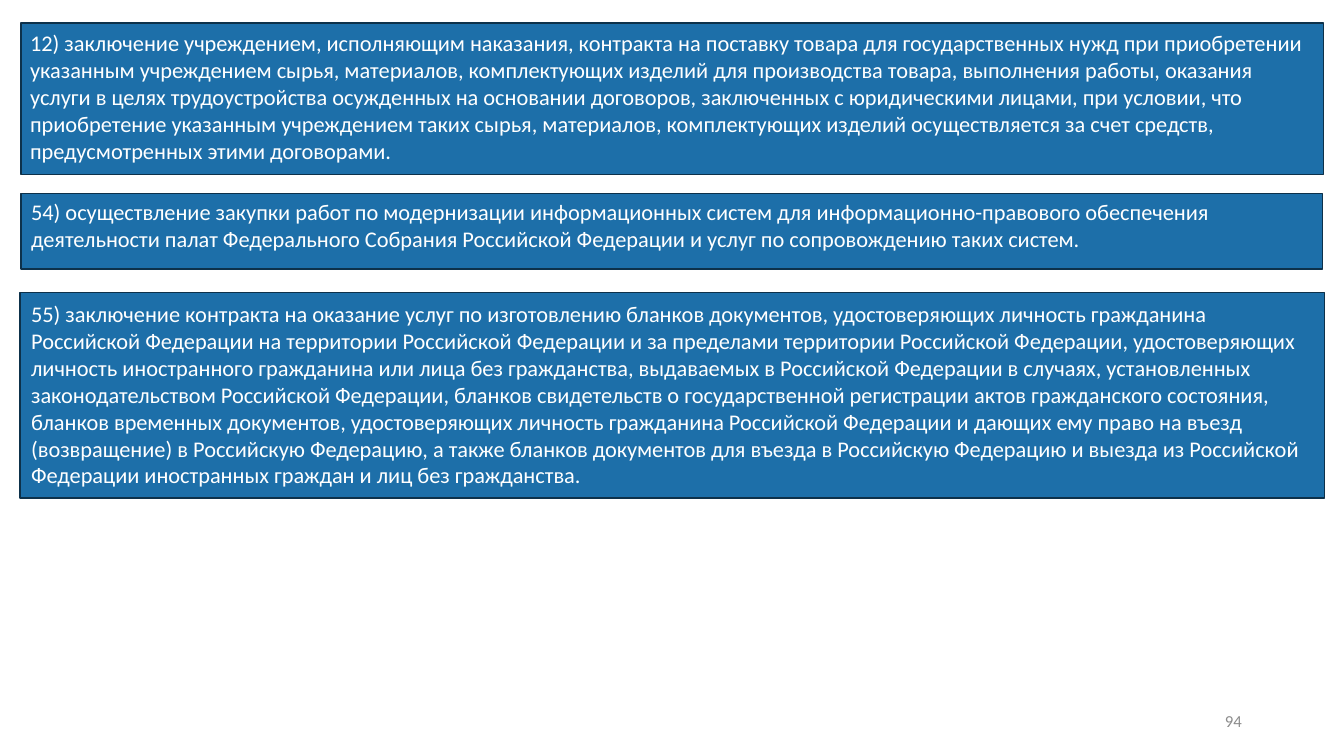
from pptx import Presentation
from pptx.dml.color import RGBColor
from pptx.enum.shapes import MSO_SHAPE
from pptx.enum.text import MSO_ANCHOR, MSO_AUTO_SIZE, PP_ALIGN
from pptx.util import Pt

COLORS = {"panel": "1D6FA9", "border": "0D314A", "text": "FFFFFF", "number": "8C8C8C"}

CLAUSES = [
    (
        (15.12, 16.56, 930.24, 108),
        (14.4, 17.28, 931.68, 104.4),
        "12) заключение учреждением, исполняющим наказания, контракта на поставку товара "
        "для государственных нужд при приобретении указанным учреждением сырья, материалов, "
        "комплектующих изделий для производства товара, выполнения работы, оказания услуги "
        "в целях трудоустройства осужденных на основании договоров, заключенных с юридическими "
        "лицами, при условии, что приобретение указанным учреждением таких сырья, материалов, "
        "комплектующих изделий осуществляется за счет средств, предусмотренных этими договорами.",
    ),
    (
        (15.12, 138.24, 929.52, 54),
        (15.12, 138.24, 930.24, 46.08),
        "54) осуществление закупки работ по модернизации информационных систем для "
        "информационно-правового обеспечения деятельности палат Федерального Собрания "
        "Российской Федерации и услуг по сопровождению таких систем.",
    ),
    (
        (14.4, 208.8, 931.68, 146.88),
        (15.12, 210.96, 929.52, 143.28),
        "55) заключение контракта на оказание услуг по изготовлению бланков документов, "
        "удостоверяющих личность гражданина Российской Федерации на территории Российской "
        "Федерации и за пределами территории Российской Федерации, удостоверяющих личность "
        "иностранного гражданина или лица без гражданства, выдаваемых в Российской Федерации "
        "в случаях, установленных законодательством Российской Федерации, бланков свидетельств "
        "о государственной регистрации актов гражданского состояния, бланков временных "
        "документов, удостоверяющих личность гражданина Российской Федерации и дающих ему "
        "право на въезд (возвращение) в Российскую Федерацию, а также бланков документов для "
        "въезда в Российскую Федерацию и выезда из Российской Федерации иностранных граждан "
        "и лиц без гражданства.",
    ),
]


class SlideBuilder:
    font = "Calibri"

    def __init__(self, slide):
        self.slide = slide

    def color(self, name):
        return RGBColor.from_string(COLORS[name])

    def panel(self, frame):
        panel = self.slide.shapes.add_shape(MSO_SHAPE.RECTANGLE, *map(Pt, frame))
        panel.shadow.inherit = False
        panel.fill.solid()
        panel.fill.fore_color.rgb = self.color("panel")
        panel.line.color.rgb = self.color("border")
        panel.line.width = Pt(1)

    def text(self, frame, wording, size, color, align=PP_ALIGN.LEFT,
             anchor=MSO_ANCHOR.TOP, fit=MSO_AUTO_SIZE.NONE):
        box = self.slide.shapes.add_textbox(*map(Pt, frame))
        box.text_frame.text = wording
        box.text_frame.word_wrap = True
        box.text_frame.auto_size = fit
        box.text_frame.vertical_anchor = anchor
        para = box.text_frame.paragraphs[0]
        para.alignment = align
        span = para.runs[0]
        span.font.name = self.font
        span.font.size = Pt(size)
        span.font.color.rgb = self.color(color)

    def clause(self, panel_frame, text_frame, wording):
        self.panel(panel_frame)
        self.text(text_frame, wording, 16, "text", fit=MSO_AUTO_SIZE.SHAPE_TO_FIT_TEXT)

    def page_number(self, number):
        self.text((678.24, 500.4, 216, 28.8), number, 12, "number",
                  PP_ALIGN.RIGHT, MSO_ANCHOR.MIDDLE)


def main():
    deck = Presentation()
    deck.slide_width = Pt(960)
    deck.slide_height = Pt(540)
    page = SlideBuilder(deck.slides.add_slide(deck.slide_layouts[6]))
    page.page_number("94")
    for clause in CLAUSES:
        page.clause(*clause)
    deck.save("out.pptx")


if __name__ == "__main__":
    main()
